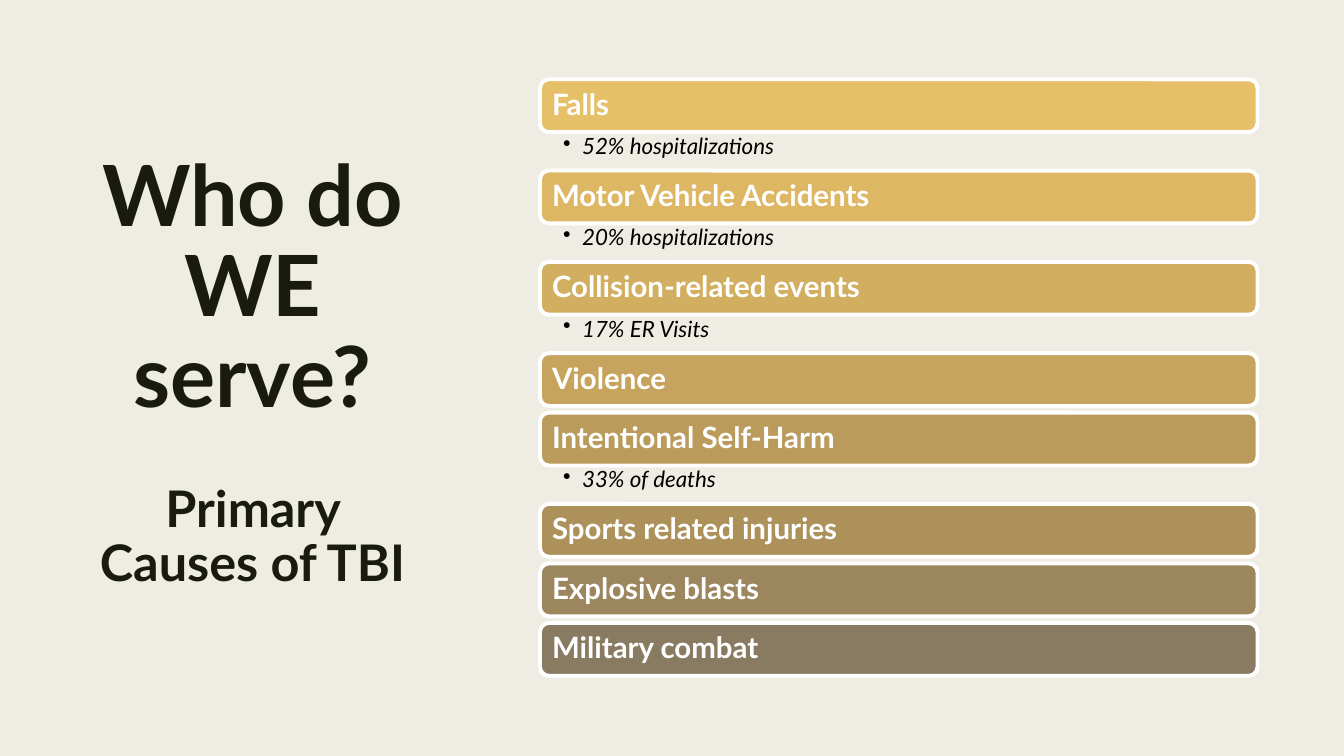
import pptx
import pptx.dml.color
import pptx.enum.shapes
import pptx.enum.text
import pptx.util
from lxml import etree
from pptx.oxml.ns import qn

Cm, Pt = pptx.util.Cm, pptx.util.Pt
Anchor, Align = pptx.enum.text.MSO_ANCHOR, pptx.enum.text.PP_ALIGN


class Theme:
    font = "Lato"
    background = "EFEDE3"
    title = "191B0E"
    bar_text = "FFFFFF"
    detail_text = "000000"
    question_size = 60.3
    subtitle_size = 36
    bar_size = 21
    detail_size = 16


def rgb(value):
    return pptx.dml.color.RGBColor.from_string(value)


def add_span(para, text, size, color, bold=False, italic=False):
    span = para.add_run()
    span.text = text
    span.font.name = Theme.font
    span.font.size = Pt(size)
    span.font.color.rgb = rgb(color)
    span.font.bold = bold
    span.font.italic = italic


# Page
deck = pptx.Presentation()
deck.slide_width, deck.slide_height = Cm(33.87), Cm(19.05)
page = deck.slides.add_slide(deck.slide_layouts[5])
page.background.fill.solid()
page.background.fill.fore_color.rgb = rgb(Theme.background)

# Title
title = page.shapes.title
title.left, title.top, title.width, title.height = Cm(1.78), Cm(1.78), Cm(9.17), Cm(15.49)
frame = title.text_frame
frame.auto_size = pptx.enum.text.MSO_AUTO_SIZE.NONE
frame.word_wrap = True
frame.vertical_anchor = Anchor.MIDDLE
frame.margin_left = frame.margin_right = Cm(0.4)
frame.margin_top, frame.margin_bottom = Cm(0.13), Cm(0.36)
question, subtitle = frame.paragraphs[0], frame.add_paragraph()
for para in (question, subtitle):
    para.alignment = Align.CENTER
    para.line_spacing = 0.89
subtitle.space_before = Pt(42.5)
add_span(question, "Who do WE serve?", Theme.question_size, Theme.title, bold=True)
add_span(subtitle, "Primary Causes of TBI", Theme.subtitle_size, Theme.title, bold=True)

# Causes: name, bar colour, detail below the bar
causes = [
    ("Falls", "E6C069", "52% hospitalizations"),
    ("Motor Vehicle Accidents", "DDB764", "20% hospitalizations"),
    ("Collision-related events", "D2AE60", "17% ER Visits"),
    ("Violence", "C6A45D", None),
    ("Intentional Self-Harm", "BA9B5C", "33% of deaths"),
    ("Sports related injuries", "AC915B", None),
    ("Explosive blasts", "9B865D", None),
    ("Military combat", "897B61", None),
]
left, width = Cm(13.61), Cm(18.08)
bar_height, detail_height, gap = Cm(1.33), Cm(0.97), Cm(0.17)
top = Cm(2)

for name, color, detail in causes:
    # Bar
    bar = page.shapes.add_shape(
        pptx.enum.shapes.MSO_SHAPE.ROUNDED_RECTANGLE, left, top, width, bar_height)
    bar.shadow.inherit = False
    bar.fill.solid()
    bar.fill.fore_color.rgb = rgb(color)
    bar.line.color.rgb = rgb(Theme.bar_text)
    bar.line.width = Pt(2.75)
    frame = bar.text_frame
    frame.word_wrap = True
    frame.vertical_anchor = Anchor.MIDDLE
    frame.margin_left = frame.margin_right = Cm(0.24)
    para = frame.paragraphs[0]
    para.alignment = Align.LEFT
    para.line_spacing = 0.9
    add_span(para, name, Theme.bar_size, Theme.bar_text, bold=True)
    top += bar_height

    if detail is None:
        top += gap
        continue

    # Bulleted detail
    box = page.shapes.add_textbox(left, top, width, detail_height)
    frame = box.text_frame
    frame.word_wrap = True
    frame.margin_left, frame.margin_right = Cm(0.58), Cm(0.41)
    frame.margin_top = frame.margin_bottom = Cm(0.08)
    para = frame.paragraphs[0]
    para.line_spacing = 0.9
    properties = para._p.get_or_add_pPr()
    properties.set("marL", str(Cm(0.48)))
    properties.set("indent", str(-Cm(0.48)))
    etree.SubElement(properties, qn("a:buChar")).set("char", "•")
    add_span(para, detail, Theme.detail_size, Theme.detail_text, italic=True)
    top += detail_height

deck.save("out.pptx")
